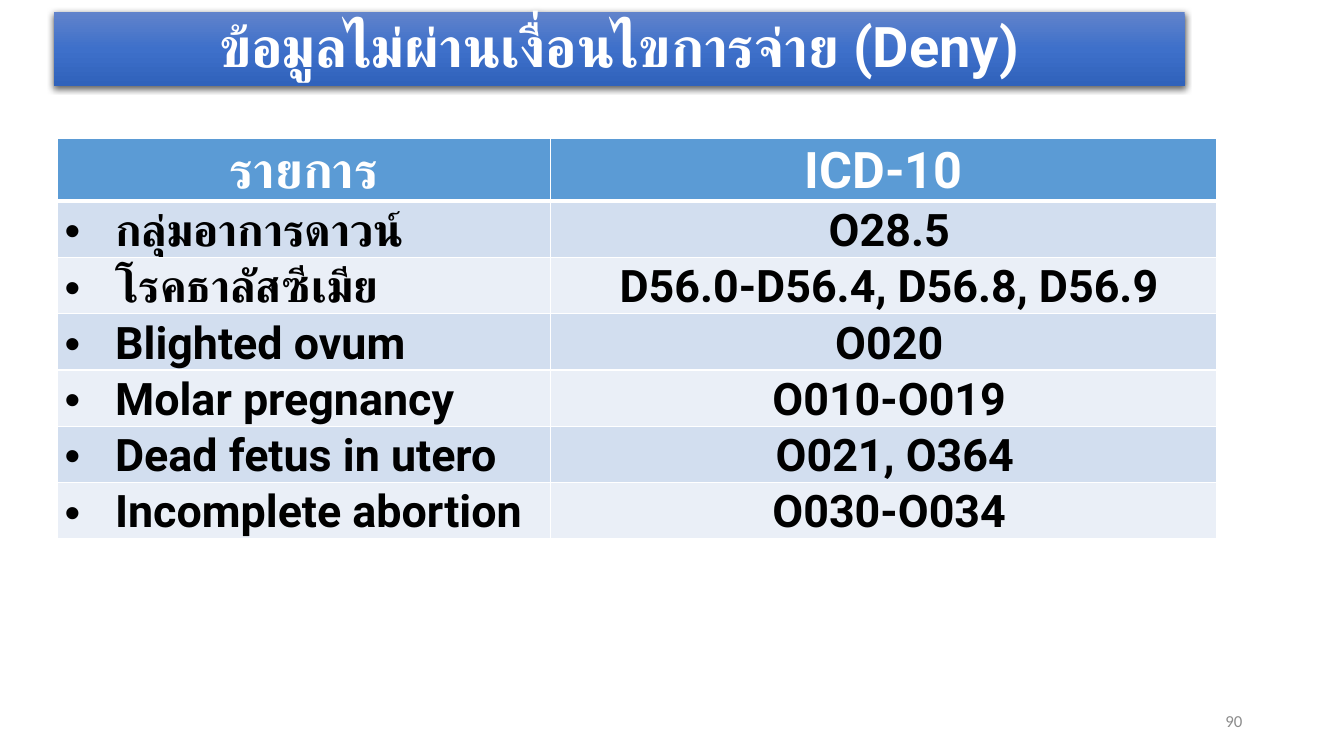
from dataclasses import dataclass

from lxml import etree
from pptx import Presentation
from pptx.dml.color import RGBColor
from pptx.enum.text import MSO_ANCHOR, MSO_AUTO_SIZE, PP_ALIGN
from pptx.oxml import parse_xml
from pptx.oxml.ns import qn
from pptx.util import Inches, Pt

LEFT, CENTER, RIGHT = PP_ALIGN.LEFT, PP_ALIGN.CENTER, PP_ALIGN.RIGHT
MIDDLE = MSO_ANCHOR.MIDDLE
NO_FIT = MSO_AUTO_SIZE.NONE

SLIDE_WIDTH, SLIDE_HEIGHT = Inches(13.33), Inches(7.5)
DRAWING_NS = 'xmlns:a="http://schemas.openxmlformats.org/drawingml/2006/main"'


@dataclass(frozen=True)
class Theme:
    font: str = "Roboto"
    number_font: str = "Calibri"
    white: str = "FFFFFF"
    black: str = "000000"
    gray: str = "8C8C8C"
    header: str = "5B9BD5"
    bands: tuple = ("D2DEEF", "EAEFF7")
    banner: tuple = ((0, "6183CB"), (50, "3E70CA"), (100, "3062BB"))
    title_size: int = 40
    header_size: int = 36
    body_size: int = 32
    number_size: int = 12


THEME = Theme()

TITLE = "ข้อมูลไม่ผ่านเงื่อนไขการจ่าย (Deny)"
PAGE_NUMBER = "90"
HEADINGS = ("รายการ", "ICD-10")
DENIED_CODES = (
    ("กลุ่มอาการดาวน์", " O28.5"),
    ("โรคธาลัสซีเมีย", " D56.0-D56.4, D56.8, D56.9"),
    ("Blighted ovum", " O020"),
    ("Molar pregnancy", " O010-O019"),
    ("Dead fetus in utero", "  O021, O364"),
    ("Incomplete abortion", " O030-O034"),
)


def columns(count):
    return int(SLIDE_WIDTH * count / 100)


def rows(count):
    return int(SLIDE_HEIGHT * count / 100)


def write(frame, text, *, size, color, font=THEME.font, bold=True,
          align=CENTER, spacing=None, bullet=False):
    paragraph = frame.paragraphs[0]
    paragraph.alignment = align
    paragraph.line_spacing = spacing
    run = paragraph.add_run()
    run.text = text
    run.font.name = font
    run.font.size = Pt(size)
    run.font.bold = bold
    run.font.color.rgb = RGBColor.from_string(color)
    for script in ("a:ea", "a:cs"):
        etree.SubElement(run.font._element, qn(script), typeface=font)
    if bullet:
        properties = paragraph._p.get_or_add_pPr()
        properties.set("marL", str(columns(3.75)))
        properties.set("indent", str(-columns(3.75)))
        etree.SubElement(properties, qn("a:buFont"), typeface="Arial")
        etree.SubElement(properties, qn("a:buChar"), char="•")


def add_banner(slide):
    banner = slide.shapes.title
    banner.left, banner.top = columns(3.98), rows(1.6)
    banner.width, banner.height = columns(84.17), rows(9.73)
    stops = "".join(
        f'<a:gs pos="{share * 1000}"><a:srgbClr val="{color}"/></a:gs>'
        for share, color in THEME.banner)
    properties = banner._element.spPr
    properties.append(parse_xml(
        f'<a:gradFill {DRAWING_NS} rotWithShape="1"><a:gsLst>{stops}</a:gsLst>'
        '<a:lin ang="5400000" scaled="0"/></a:gradFill>'))
    properties.append(parse_xml(
        f'<a:effectLst {DRAWING_NS}><a:outerShdw blurRad="{Pt(4.5)}" '
        f'dist="{Pt(1.5)}" dir="5400000" algn="ctr" rotWithShape="0">'
        f'<a:srgbClr val="{THEME.black}"><a:alpha val="63000"/></a:srgbClr>'
        '</a:outerShdw></a:effectLst>'))
    frame = banner.text_frame
    frame.auto_size = NO_FIT
    frame.word_wrap = True
    frame.vertical_anchor = MIDDLE
    write(frame, TITLE, size=THEME.title_size, color=THEME.white, spacing=0.9)


def set_borders(cell, bottom):
    properties = cell._tc.get_or_add_tcPr()
    widths = {"lnL": 1, "lnR": 1, "lnT": 1, "lnB": bottom}
    for position, (side, width) in enumerate(widths.items()):
        properties.insert(position, parse_xml(
            f'<a:{side} {DRAWING_NS} w="{Pt(width)}"><a:solidFill>'
            f'<a:srgbClr val="{THEME.white}"/></a:solidFill></a:{side}>'))


def fill_cell(cell, text, fill, bottom=1, **text_format):
    cell.margin_left = cell.margin_right = columns(0.53)
    cell.margin_top = cell.margin_bottom = 0
    cell.fill.solid()
    cell.fill.fore_color.rgb = RGBColor.from_string(fill)
    set_borders(cell, bottom)
    write(cell.text_frame, text, spacing=1.07, **text_format)


def add_code_table(slide):
    row_count = len(DENIED_CODES) + 1
    table = slide.shapes.add_table(
        row_count, len(HEADINGS), columns(4.28), rows(18.27),
        columns(86.27), rows(5.47) * row_count).table
    for column, share in zip(table.columns, (36.68, 49.59)):
        column.width = columns(share)
    for index, heading in enumerate(HEADINGS):
        fill_cell(table.cell(0, index), heading, THEME.header, bottom=3,
                  size=THEME.header_size, color=THEME.white)
    for index, (condition, codes) in enumerate(DENIED_CODES):
        band = THEME.bands[index % 2]
        body = {"size": THEME.body_size, "color": THEME.black}
        fill_cell(table.cell(index + 1, 0), condition, band,
                  align=LEFT, bullet=True, **body)
        fill_cell(table.cell(index + 1, 1), codes, band, **body)


def add_page_number(slide):
    frame = slide.shapes.add_textbox(
        columns(70.67), rows(92.67), columns(22.5), rows(5.33)).text_frame
    frame.word_wrap = True
    frame.vertical_anchor = MIDDLE
    write(frame, PAGE_NUMBER, size=THEME.number_size, color=THEME.gray,
          font=THEME.number_font, bold=False, align=RIGHT)


def main():
    deck = Presentation()
    deck.slide_width, deck.slide_height = SLIDE_WIDTH, SLIDE_HEIGHT
    slide = deck.slides.add_slide(deck.slide_layouts.get_by_name("Title Only"))
    add_code_table(slide)
    add_page_number(slide)
    add_banner(slide)
    deck.save("out.pptx")


if __name__ == "__main__":
    main()
